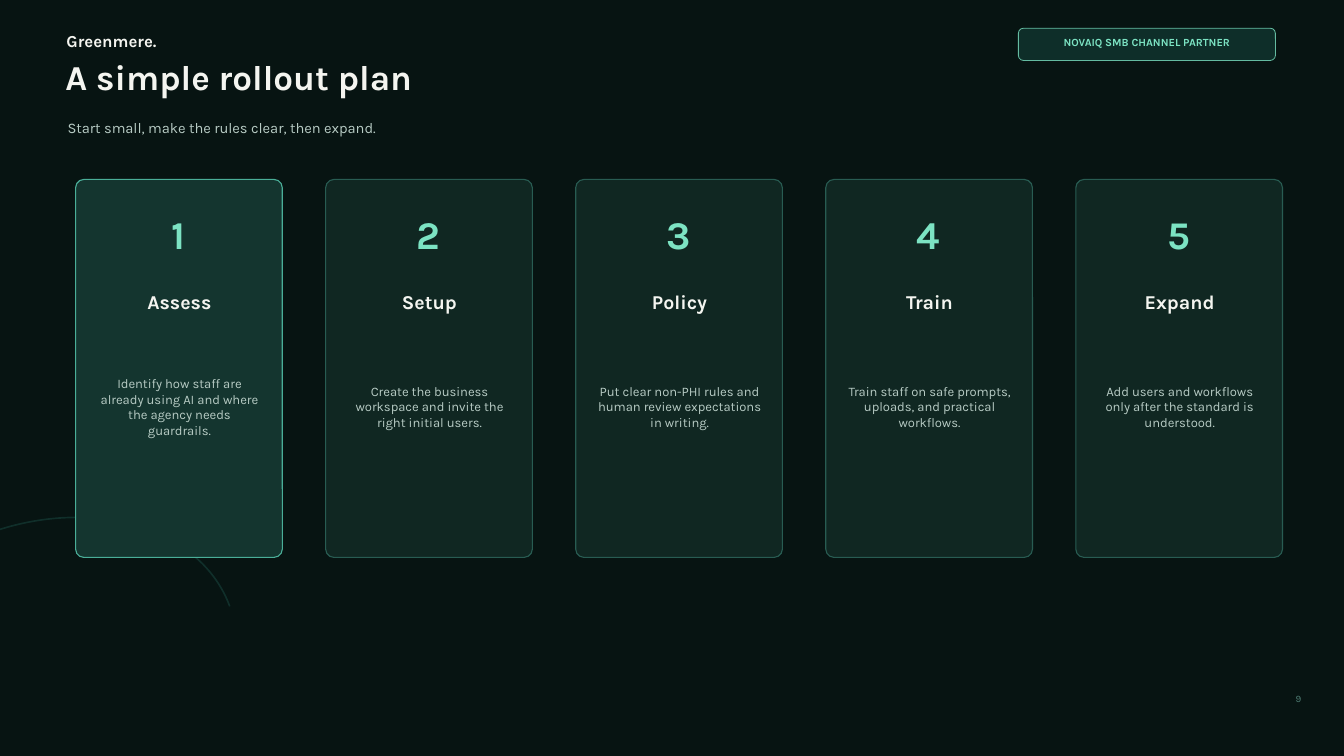
from dataclasses import dataclass

from lxml.etree import SubElement
from pptx import Presentation
from pptx.dml.color import RGBColor
from pptx.enum.shapes import MSO_SHAPE as Shape
from pptx.enum.text import MSO_ANCHOR as Anchor, PP_ALIGN as Align
from pptx.oxml.ns import qn
from pptx.util import Inches, Pt

FONT = "Karla"
DARK, WHITE, MINT, GREY = "071412", "F4F5F0", "7CE3C3", "B7CBC4"
LEFT, TOP, PITCH = 0.75, 1.78, 2.48


@dataclass
class Box:
    x: float
    y: float
    w: float
    h: float


@dataclass
class Step:
    name: str
    note: str
    fill: str = "102722"
    line: str = "285C52"


STEPS = [
    Step("Assess", "Identify how staff are already using AI and where the agency needs guardrails.",
         "14352F", "4AAE98"),
    Step("Setup", "Create the business workspace and invite the right initial users."),
    Step("Policy", "Put clear non-PHI rules and human review expectations in writing."),
    Step("Train", "Train staff on safe prompts, uploads, and practical workflows."),
    Step("Expand", "Add users and workflows only after the standard is understood."),
]


def paint(fill, color: str, alpha: int = 100) -> None:
    """Make a fill solid, with opacity in percent."""
    fill.solid()
    fill.fore_color.rgb = RGBColor.from_string(color)
    if alpha < 100:
        tint = fill._xPr.find(qn("a:solidFill"))[0]
        SubElement(tint, qn("a:alpha"), val=str(alpha * 1000))


def draw(slide, kind: Shape, box: Box, line: str, width: float, alpha: int = 100):
    shape = slide.shapes.add_shape(
        kind, Inches(box.x), Inches(box.y), Inches(box.w), Inches(box.h))
    shape.shadow.inherit = False
    shape.fill.background()
    paint(shape.line.fill, line, alpha)
    shape.line.width = Pt(width)
    return shape


def write(slide, box: Box, text: str, size: float, color: str, bold: bool = False,
          align: Align = Align.LEFT):
    frame = slide.shapes.add_textbox(
        Inches(box.x), Inches(box.y), Inches(box.w), Inches(box.h)).text_frame
    frame.word_wrap = True
    frame.vertical_anchor = Anchor.MIDDLE
    frame.margin_left = frame.margin_right = frame.margin_top = frame.margin_bottom = 0
    frame.text = text
    para = frame.paragraphs[0]
    para.alignment = align
    font = para.runs[0].font
    font.name, font.size, font.bold = FONT, Pt(size), bold
    font.color.rgb = RGBColor.from_string(color)
    return frame


def head(slide) -> None:
    write(slide, Box(0.66, 0.28, 1.8, 0.25), "Greenmere.", 12, WHITE, True)
    badge = draw(slide, Shape.ROUNDED_RECTANGLE, Box(10.1, 0.28, 2.55, 0.32), MINT, 0.6, 80)
    badge.adjustments[0] = 0.16
    paint(badge.fill, "0F2F2A", 98)
    write(slide, Box(10.2, 0.34, 2.35, 0.16), "NOVAIQ SMB CHANNEL PARTNER", 7.8, MINT, True,
          Align.CENTER)
    write(slide, Box(0.65, 0.48, 9.6, 0.55), "A simple rollout plan", 25, WHITE, True)
    write(slide, Box(0.67, 1.09, 8.9, 0.35), "Start small, make the rules clear, then expand.",
          10.5, GREY)


def card(slide, num: int, step: Step) -> None:
    x = LEFT + (num - 1) * PITCH
    panel = draw(slide, Shape.ROUNDED_RECTANGLE, Box(x, TOP, 2.05, 3.75), step.line, 0.8)
    panel.adjustments[0] = 0.04
    paint(panel.fill, step.fill)
    write(slide, Box(x + 0.62, TOP + 0.24, 0.8, 0.6), str(num), 28, MINT, True, Align.CENTER)
    write(slide, Box(x + 0.18, TOP + 1.07, 1.7, 0.28), step.name, 14, WHITE, True, Align.CENTER)
    write(slide, Box(x + 0.22, TOP + 1.58, 1.62, 1.35), step.note, 9.3, GREY,
          align=Align.CENTER)


def main() -> None:
    deck = Presentation()
    deck.slide_width, deck.slide_height = Inches(13.33), Inches(7.5)
    slide = deck.slides.add_slide(deck.slide_layouts[6])
    paint(slide.background.fill, DARK)
    arc = draw(slide, Shape.ARC, Box(-1.6, 5.2, 4, 3), "12322D", 1.2, 90)
    arc.rotation = 340
    head(slide)
    for num, step in enumerate(STEPS, 1):
        card(slide, num, step)
    page = write(slide, Box(12.85, 6.87, 0.4, 0.23), "9", 7, "4E7D73")
    page.vertical_anchor = Anchor.TOP
    deck.save("out.pptx")


if __name__ == "__main__":
    main()
